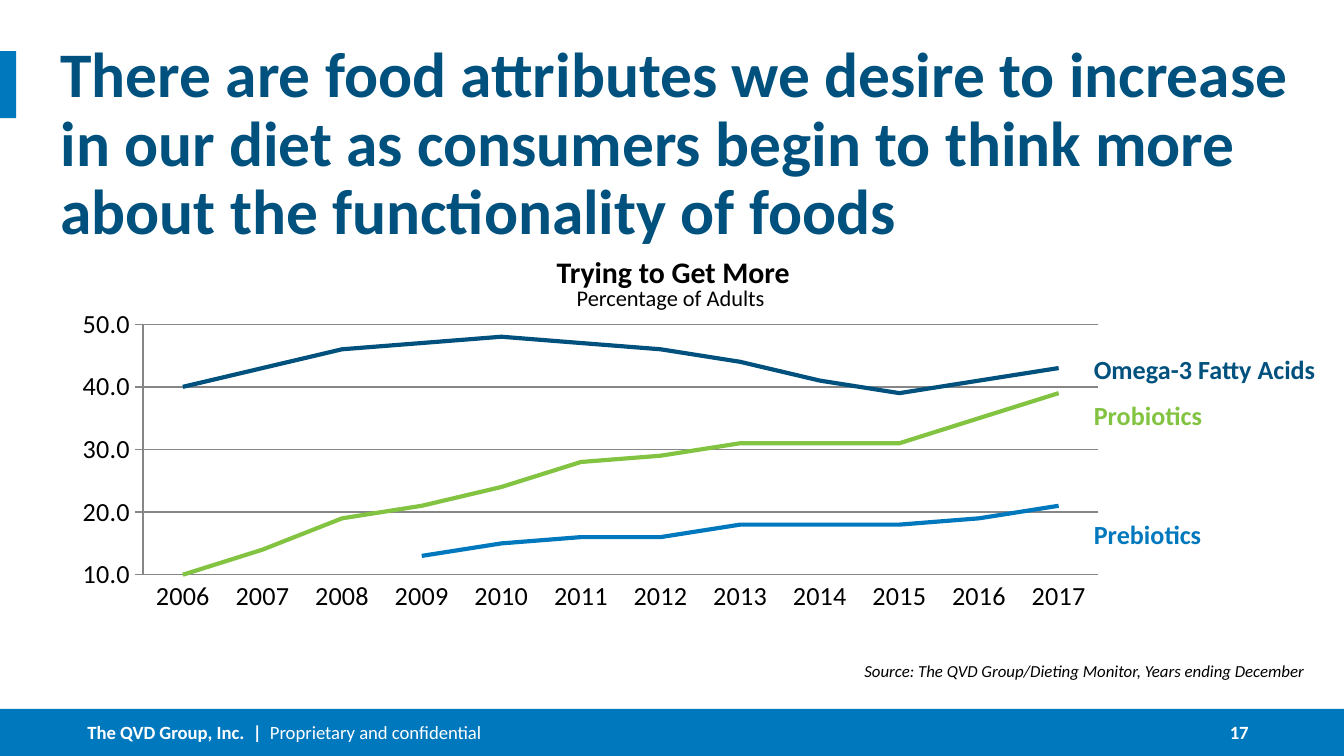
from dataclasses import dataclass

from lxml import etree
from pptx import Presentation
from pptx.chart.data import CategoryChartData
from pptx.dml.color import RGBColor
from pptx.enum.chart import XL_CHART_TYPE, XL_TICK_MARK
from pptx.enum.shapes import MSO_SHAPE
from pptx.enum.text import MSO_ANCHOR, MSO_AUTO_SIZE, PP_ALIGN
from pptx.util import Inches, Pt

LINE = XL_CHART_TYPE.LINE
TICK_NONE, TICK_OUT = XL_TICK_MARK.NONE, XL_TICK_MARK.OUTSIDE
RECT = MSO_SHAPE.RECTANGLE
TOP, MIDDLE, BOTTOM = MSO_ANCHOR.TOP, MSO_ANCHOR.MIDDLE, MSO_ANCHOR.BOTTOM
LEFT, CENTER, RIGHT = PP_ALIGN.LEFT, PP_ALIGN.CENTER, PP_ALIGN.RIGHT
FIXED = MSO_AUTO_SIZE.NONE


@dataclass(frozen=True)
class Theme:
    font: str = "Calibri"
    navy: RGBColor = RGBColor(0x00, 0x51, 0x7D)
    blue: RGBColor = RGBColor(0x00, 0x78, 0xBE)
    green: RGBColor = RGBColor(0x82, 0xC3, 0x41)
    gray: RGBColor = RGBColor(0x86, 0x86, 0x86)
    black: RGBColor = RGBColor(0, 0, 0)
    white: RGBColor = RGBColor(255, 255, 255)
    title: Pt = Pt(34)
    heading: Pt = Pt(16)
    label: Pt = Pt(14)
    subheading: Pt = Pt(12)
    footer: Pt = Pt(10)
    source: Pt = Pt(9)


theme = Theme()

# Widescreen 16:9 slide
prs = Presentation()
prs.slide_width = Inches(10)
prs.slide_height = Inches(10 * 9 / 16)
slide = prs.slides.add_slide(prs.slide_layouts[5])
footer_height = 0.35
footer_top = prs.slide_height.inches - footer_height


def style_text(shape, text, size, color, bold=False, align=LEFT, anchor=TOP,
               insets=(0, 0, 0, 0), wrap=True):
    frame = shape.text_frame
    frame.auto_size = FIXED
    frame.word_wrap = wrap
    frame.vertical_anchor = anchor
    (frame.margin_left, frame.margin_top,
     frame.margin_right, frame.margin_bottom) = [Inches(i) for i in insets]
    paragraph = frame.paragraphs[0]
    paragraph.text = text
    paragraph.alignment = align
    font = paragraph.font
    font.name, font.size, font.bold = theme.font, size, bold
    font.color.rgb = color
    return paragraph


def add_text(box, *args, **kwargs):
    shape = slide.shapes.add_textbox(*[Inches(v) for v in box])
    return style_text(shape, *args, **kwargs)


# Footer band and title accent
for box in [(0, footer_top, 10, footer_height), (0, 0.38, 0.12, 0.5)]:
    band = slide.shapes.add_shape(RECT, *[Inches(v) for v in box])
    band.shadow.inherit = False
    band.fill.solid()
    band.fill.fore_color.rgb = theme.blue
    band.line.fill.background()

# Footer text and page number
footer = add_text((0.65, footer_top, 4.11, footer_height),
                  "The QVD Group, Inc.  |  ", theme.footer, theme.white,
                  bold=True, anchor=MIDDLE)
confidential = footer.add_run()
confidential.text = "Proprietary and confidential"
confidential.font.bold = False
add_text((8.79, footer_top, 0.65, footer_height), "17", theme.footer,
         theme.white, bold=True, align=RIGHT, anchor=MIDDLE,
         insets=(0, 0.05, 0.15, 0.05), wrap=False)

# Title
title = slide.shapes.title
title.left, title.top = Inches(0.45), Inches(0.32)
title.width, title.height = Inches(9.25), Inches(0.5)
headline = style_text(
    title,
    "There are food attributes we desire to increase in our diet as consumers "
    "begin to think more about the functionality of foods",
    theme.title, theme.navy, bold=True)
headline.line_spacing = 0.9
headline.space_after = Pt(2)

# Line chart: values, line colour
trends = [
    ("Series 1", [40, 43, 46, 47, 48, 47, 46, 44, 41, 39, 41, 43], theme.navy),
    ("Series 2", [10, 14, 19, 21, 24, 28, 29, 31, 31, 31, 35, 39], theme.green),
    ("Series 3", [None] * 3 + [13, 15, 16, 16, 18, 18, 18, 19, 21], theme.blue),
]
data = CategoryChartData()
data.categories = [str(year) for year in range(2006, 2018)]
for name, values, _ in trends:
    data.add_series(name, values)
chart = slide.shapes.add_chart(LINE, Inches(0.45), Inches(2.1), Inches(8.2),
                               Inches(2.63), data).chart
chart.has_legend = False
chart.has_title = False
chart.font.name, chart.font.size = theme.font, theme.label
chart.font.color.rgb = theme.black
chart.plots[0].vary_by_categories = False
for series, (_, _, color) in zip(chart.plots[0].series, trends):
    series.smooth = False
    series.format.line.color.rgb = color
    series.format.line.width = Pt(2.25)

# Axes
years, percent = chart.category_axis, chart.value_axis
years.major_tick_mark = TICK_NONE
percent.major_tick_mark = TICK_OUT
percent.minimum_scale, percent.maximum_scale = 10, 50
percent.major_unit = 10
percent.has_major_gridlines = True
percent.tick_labels.number_format = "0.0"
percent.tick_labels.number_format_is_linked = False
for rule in (years.format.line, percent.format.line,
             percent.major_gridlines.format.line):
    rule.color.rgb = theme.gray
    rule.width = Pt(0.75)

# Fixed inner plot area
plot_area = chart.plots[0]._element.getparent()
ns = etree.QName(plot_area).namespace
for old_layout in plot_area.findall(f"{{{ns}}}layout"):
    plot_area.remove(old_layout)
layout = etree.Element(f"{{{ns}}}layout")
manual = etree.SubElement(layout, f"{{{ns}}}manualLayout")
for tag, value in [("layoutTarget", "inner"), ("xMode", "edge"),
                   ("yMode", "edge"), ("x", "0.075"), ("y", "0.119"),
                   ("w", "0.867"), ("h", "0.709")]:
    etree.SubElement(manual, f"{{{ns}}}{tag}", val=value)
plot_area.insert(0, layout)

# Source line
source = add_text((0.45, 4.78, 9.25, 0.29),
                  "Source: The QVD Group/Dieting Monitor, Years ending December",
                  theme.source, theme.black, align=RIGHT, anchor=BOTTOM)
source.font.italic = True
source.line_spacing = 0.85

# Chart headings
add_text((4.13, 1.84, 1.76, 0.37), "Trying to Get More", theme.heading,
         theme.black, bold=True, align=CENTER, insets=(0, 0.05, 0, 0.05),
         wrap=False)
subheading = add_text((4.18, 2.11, 1.62, 0.26), "Percentage of Adults",
                      theme.subheading, theme.black, align=CENTER,
                      insets=(0.1, 0.05, 0.1, 0.05), wrap=False)
subheading.line_spacing = 0.75

# Direct line labels
for label, top, width, color in [
    ("Omega-3 Fatty Acids", 2.58, 1.87, theme.navy),
    ("Probiotics", 2.92, 1.02, theme.green),
    ("Prebiotics", 3.81, 1.01, theme.blue),
]:
    add_text((8.04, top, width, 0.34), label, theme.label, color, bold=True,
             insets=(0.1, 0.05, 0.1, 0.05), wrap=False)

prs.save("out.pptx")
